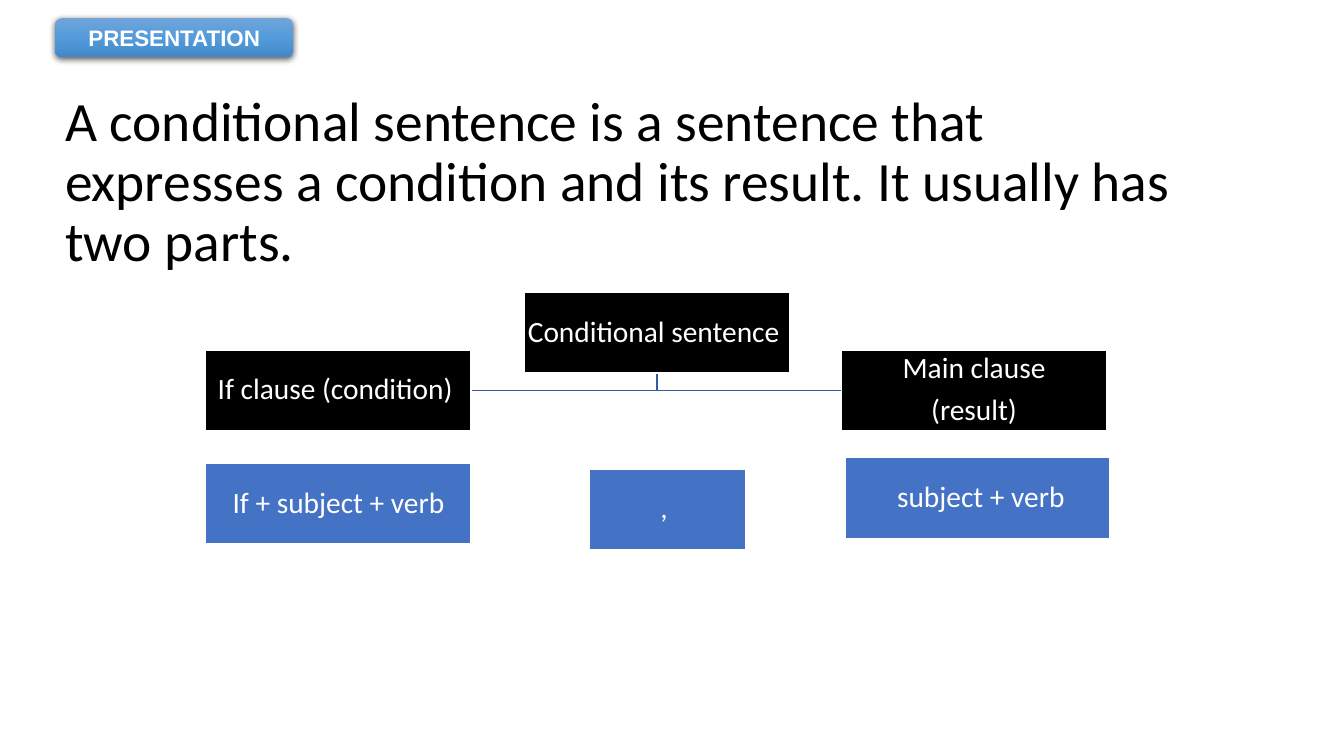
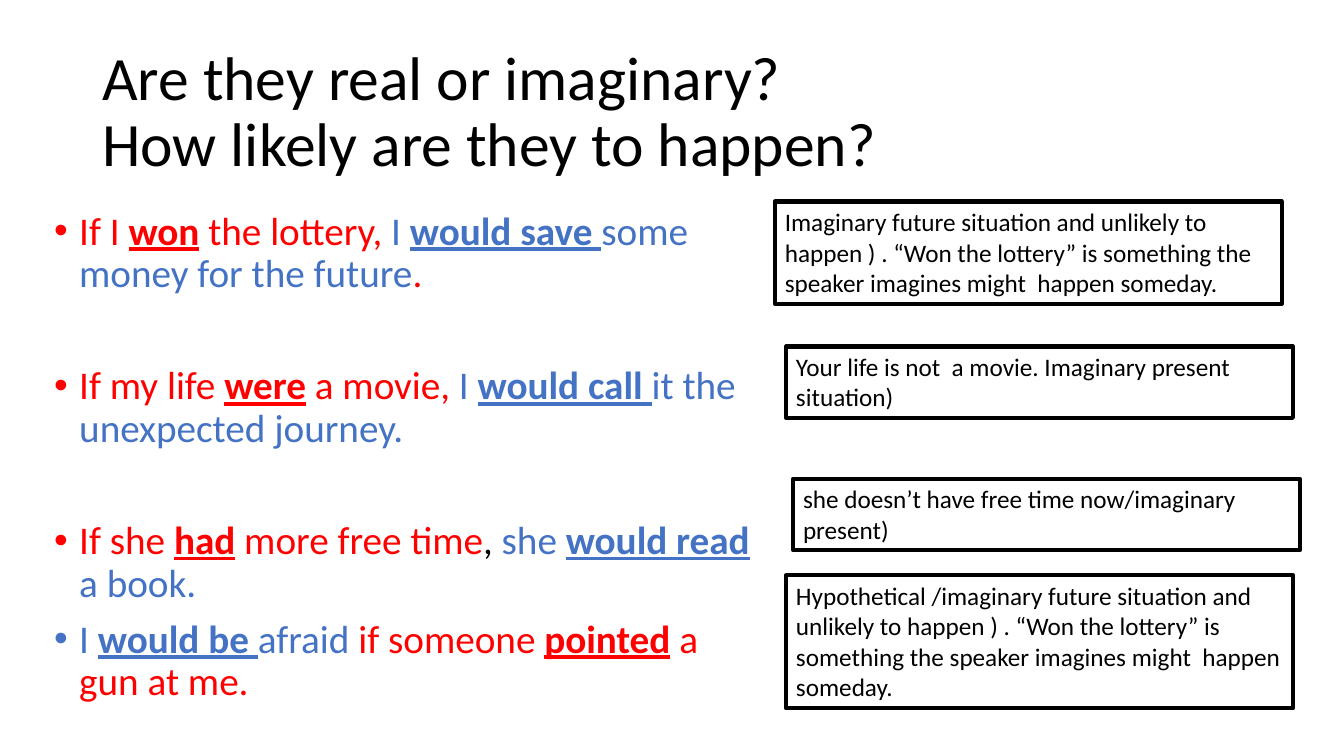
from copy import deepcopy

from lxml import etree
from pptx import Presentation
from pptx.dml.color import RGBColor
from pptx.enum import shapes, text
from pptx.oxml import ns
from pptx.util import Pt

BLACK = RGBColor(0, 0, 0)
WHITE = RGBColor(255, 255, 255)
RED = RGBColor(255, 0, 0)
BLUE = RGBColor(0x44, 0x72, 0xC4)
LINK = RGBColor(0x36, 0x5B, 0x9D)
SHINE = [(0, RGBColor(0x70, 0xA5, 0xDA)),
         (0.5, RGBColor(0x53, 0x9B, 0xDB)),
         (1, RGBColor(0x42, 0x88, 0xC8))]
FACE = "Calibri"
MID = text.MSO_ANCHOR.MIDDLE
CENTER = text.PP_ALIGN.CENTER
KIND = shapes.MSO_SHAPE

BOX_W, BOX_H = 189.5, 57.5
NOTE_W = 362

# Each part is (text, colour, marked); marked verbs are bold and underlined.
CASES = [
    [("If I ", RED, False), ("won", RED, True),
     (" the lottery, ", RED, False), ("I ", BLUE, False),
     ("would save ", BLUE, True),
     ("some money for the future", BLUE, False), (".", RED, False)],
    [("If my life ", RED, False), ("were", RED, True),
     (" a movie, ", RED, False), ("I ", BLUE, False),
     ("would call ", BLUE, True),
     ("it the unexpected journey.", BLUE, False)],
    [("If she ", RED, False), ("had", RED, True),
     (" more free time", RED, False), (", ", BLACK, False),
     ("she ", BLUE, False), ("would read ", BLUE, True),
     ("a book.", BLUE, False)],
    [("I ", BLUE, False), ("would be ", BLUE, True),
     ("afraid ", BLUE, False), ("if someone ", RED, False),
     ("pointed", RED, True), (" a gun at me.", RED, False)],
]
GAPS = [10, 50, 50, 10]

# Each note is (left, top, lines, text).
NOTES = [
    (553.5, 144, 3, "Imaginary future situation and unlikely to happen ) . "
     "“Won the lottery” is something the speaker imagines might  happen "
     "someday."),
    (561.5, 247.5, 2,
     "Your life is not  a movie. Imaginary present situation)"),
    (566.5, 342, 2, "she doesn’t have free time now/imaginary present)"),
    (561.5, 411, 4, "Hypothetical /imaginary future situation and unlikely to "
     "happen ) . “Won the lottery” is something the speaker imagines might  "
     "happen someday."),
]

# Each clause is (dx, dy, width, fill, lines).
CLAUSES = [
    (0, 41, BOX_W, BLACK, ["If clause (condition) "]),
    (454, 41, BOX_W, BLACK, ["Main clause", "(result)"]),
    (227.5, 0, BOX_W, BLACK, ["Conditional sentence "]),
    (0, 122, BOX_W, BLUE, ["If + subject + verb"]),
    (456.5, 118, BOX_W, BLUE, [" subject + verb"]),
    (274, 126, 111.5, BLUE, [", "]),
]


def style(para, size, color=None, face=FACE, bold=None):
    font = para.font
    font.name, font.size, font.bold = face, Pt(size), bold
    if color is not None:
        font.color.rgb = color


def frame(slide, x, y, w, h):
    shape = slide.shapes.add_textbox(Pt(x), Pt(y), Pt(w), Pt(h))
    shape.text_frame.word_wrap = True
    return shape


def title(slide, x, y, words, size):
    body = frame(slide, x, y, 828, 104.5).text_frame
    body.vertical_anchor = MID
    body.text = words
    para = body.paragraphs[0]
    para.line_spacing = 0.9
    style(para, size, BLACK)


def badge(slide, x, y, w, h, words):
    """Place a glossy rounded label with a soft shadow."""
    shape = slide.shapes.add_shape(
        KIND.ROUNDED_RECTANGLE, Pt(x), Pt(y), Pt(w), Pt(h))
    shape.line.fill.background()
    fill = shape.fill
    fill.gradient()
    fill.gradient_angle = 270
    props = shape.element.spPr
    stops = props.find(".//" + ns.qn("a:gsLst"))
    stops.insert(1, deepcopy(stops[0]))
    for stop, (pos, color) in zip(fill.gradient_stops, SHINE):
        stop.position, stop.color.rgb = pos, color
    shape.shadow.inherit = False
    glow = etree.SubElement(
        props.find(ns.qn("a:effectLst")), ns.qn("a:outerShdw"),
        blurRad=str(Pt(4.5)), dist=str(Pt(1.5)), dir="5400000",
        algn="ctr", rotWithShape="0")
    tint = etree.SubElement(glow, ns.qn("a:srgbClr"), val="000000")
    etree.SubElement(tint, ns.qn("a:alpha"), val="63000")
    body = shape.text_frame
    body.vertical_anchor = MID
    body.text = words
    para = body.paragraphs[0]
    para.alignment = CENTER
    style(para, 16, WHITE, "Arial", True)


def clause(slide, x, y, w, fill, lines):
    shape = slide.shapes.add_shape(
        KIND.RECTANGLE, Pt(x), Pt(y), Pt(w), Pt(BOX_H))
    shape.shadow.inherit = False
    shape.fill.solid()
    shape.fill.fore_color.rgb = fill
    shape.line.color.rgb = WHITE
    shape.line.width = Pt(1)
    body = shape.text_frame
    body.margin_left = body.margin_right = Pt(1)
    body.margin_top = body.margin_bottom = Pt(1)
    body.vertical_anchor = MID
    body.word_wrap = True
    body.text = "\n".join(lines)
    for para in body.paragraphs:
        para.alignment = CENTER
        para.line_spacing = 0.9
        para.space_after = Pt(7.35)
        style(para, 21, WHITE)


def links(slide, x, y):
    """Join the top box to the two clauses below it."""
    left, right = x + BOX_W, x + 454
    mid, low = x + 227.5 + BOX_W / 2, y + 41 + BOX_H / 2
    pen = slide.shapes.build_freeform(Pt(left), Pt(low))
    pen.add_line_segments(
        [(Pt(mid), Pt(low)), (Pt(mid), Pt(y + BOX_H))], close=False)
    elbow = pen.convert_to_shape()
    elbow.fill.background()
    elbow.shadow.inherit = False
    bar = slide.shapes.add_connector(
        shapes.MSO_CONNECTOR.STRAIGHT, Pt(left), Pt(low), Pt(right), Pt(low))
    etree.SubElement(bar.element.spPr, ns.qn("a:effectLst"))
    for item in (elbow, bar):
        item.line.color.rgb = LINK
        item.line.width = Pt(1)


def tree(slide, x, y):
    links(slide, x, y)
    for dx, dy, w, fill, lines in CLAUSES:
        clause(slide, x + dx, y + dy, w, fill, lines)


def bullet(para):
    props = para._p.get_or_add_pPr()
    props.set("marL", str(Pt(18)))
    props.set("indent", str(Pt(-18)))
    etree.SubElement(props, ns.qn("a:buFont"), typeface="Arial")
    etree.SubElement(props, ns.qn("a:buChar"), char="•")


def cases(slide, x, y, w, h):
    body = frame(slide, x, y, w, h).text_frame
    for i, (parts, gap) in enumerate(zip(CASES, GAPS)):
        para = body.add_paragraph() if i else body.paragraphs[0]
        para.line_spacing = 0.9
        para.space_before = Pt(gap)
        bullet(para)
        style(para, 28)
        for words, color, mark in parts:
            run = para.add_run()
            run.text = words
            run.font.color.rgb = color
            if mark:
                run.font.bold = run.font.underline = True


def note(slide, x, y, lines, words):
    shape = frame(slide, x, y, NOTE_W, 7 + 22 * lines)
    shape.line.color.rgb = BLACK
    shape.line.width = Pt(3)
    body = shape.text_frame
    body.auto_size = text.MSO_AUTO_SIZE.SHAPE_TO_FIT_TEXT
    body.text = words
    style(body.paragraphs[0], 18, BLACK)


def main():
    deck = Presentation()
    deck.slide_width, deck.slide_height = Pt(960), Pt(540)
    blank = deck.slide_layouts[6]

    slide = deck.slides.add_slide(blank)
    title(slide, 39.5, 79, "A conditional sentence is a sentence that expresses "
          "a condition and its result. It usually has two parts.", 39.6)
    tree(slide, 147, 209)
    badge(slide, 39.5, 13, 170, 28, "PRESENTATION")

    slide = deck.slides.add_slide(blank)
    title(slide, 66, 29,
          "Are they real or imaginary?\vHow likely are they to happen?", 44)
    cases(slide, 31.5, 147.5, 514, 379)
    for item in NOTES:
        note(slide, *item)

    deck.save("out.pptx")


if __name__ == "__main__":
    main()
